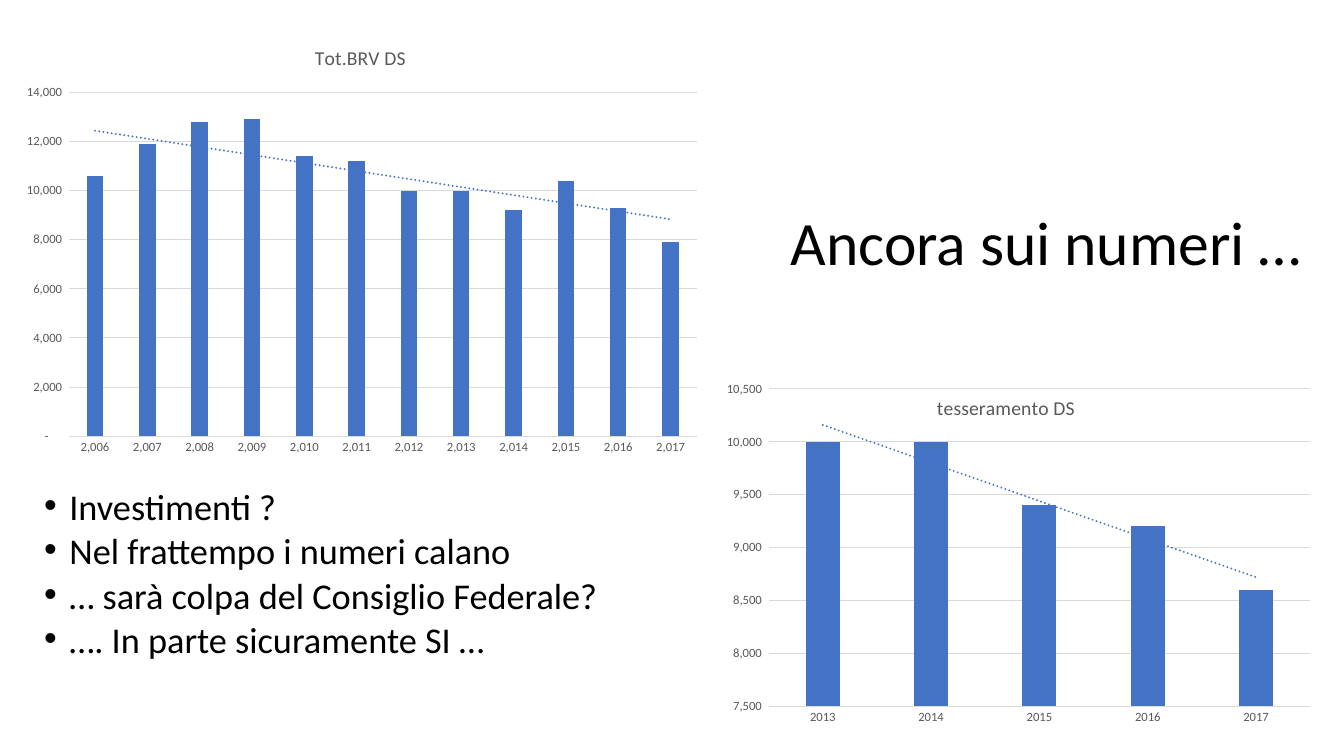
from lxml import etree
from pptx import Presentation, util as u
from pptx.chart import data as chart_data
from pptx.dml import color
from pptx.enum import chart as chart_enum, text
from pptx.oxml import parse_xml
from pptx.oxml.ns import nsdecls, qn

COLORS = {"text": "000000", "label": "595959", "grid": "D9D9D9", "bar": "4472C4"}
THOUSANDS = '_-* #,##0_-;\\-* #,##0_-;_-* "-"??_-;_-@_'


def set_all(target, **values):
    for name, value in values.items():
        setattr(target, name, value)


class SlideBuilder:
    """Holds the style and the current slide."""

    font_name = "Calibri"

    def __init__(self, deck):
        self.page = deck.slides.add_slide(deck.slide_layouts[5])

    def style_font(self, font, size, shade):
        set_all(font, name=self.font_name, size=u.Pt(size), bold=False)
        font.color.rgb = color.RGBColor.from_string(COLORS[shade])

    def style_line(self, line, shade):
        line.color.rgb = color.RGBColor.from_string(COLORS[shade])
        line.width = u.Pt(0.75)

    def title(self, words, bounds):
        box = self.page.shapes.title
        set_all(box, **dict(zip(("left", "top", "width", "height"), map(u.Inches, bounds))))
        set_all(box.text_frame, text=words, word_wrap=True,
                auto_size=text.MSO_AUTO_SIZE.NONE, vertical_anchor=text.MSO_ANCHOR.MIDDLE)
        para = box.text_frame.paragraphs[0]
        set_all(para, alignment=text.PP_ALIGN.LEFT, line_spacing=0.9)
        self.style_font(para.runs[0].font, 44, "text")

    def bullets(self, lines, bounds):
        frame = self.page.shapes.add_textbox(*map(u.Inches, bounds)).text_frame
        frame.word_wrap = True
        for number, words in enumerate(lines):
            para = frame.add_paragraph() if number else frame.paragraphs[0]
            set_all(para, line_spacing=0.7, space_before=u.Pt(10 if number else 0))
            props = para._p.get_or_add_pPr()
            props.set("marL", str(u.Inches(0.25)))
            props.set("indent", str(u.Inches(-0.25)))
            etree.SubElement(props, qn("a:buFont")).set("typeface", "Arial")
            etree.SubElement(props, qn("a:buChar")).set("char", "•")
            span = para.add_run()
            span.text = words
            self.style_font(span.font, 25.9, "text")

    def column_chart(self, name, years, values, scale, bounds, year_format="General"):
        data = chart_data.CategoryChartData(number_format=THOUSANDS)
        data.categories = years
        data.categories.number_format = year_format
        data.add_series(name, values)
        chart = self.page.shapes.add_chart(
            chart_enum.XL_CHART_TYPE.COLUMN_CLUSTERED, *map(u.Inches, bounds), data).chart
        self.style_font(chart.font, 10, "text")
        set_all(chart, has_legend=False, has_title=True)
        chart.chart_title.text_frame.text = name
        heading = chart.chart_title.text_frame.paragraphs[0].runs[0]
        self.style_font(heading.font, 14, "label")

        # Axes and gridlines
        for axis in (chart.category_axis, chart.value_axis):
            set_all(axis, major_tick_mark=chart_enum.XL_TICK_MARK.NONE,
                    minor_tick_mark=chart_enum.XL_TICK_MARK.NONE)
            self.style_font(axis.tick_labels.font, 9, "label")
        set_all(chart.category_axis.tick_labels, number_format=year_format,
                number_format_is_linked=False)
        self.style_line(chart.category_axis.format.line, "grid")
        low, high, step = scale
        set_all(chart.value_axis, minimum_scale=low, maximum_scale=high,
                major_unit=step, has_major_gridlines=True)
        set_all(chart.value_axis.tick_labels, number_format=THOUSANDS,
                number_format_is_linked=False)
        chart.value_axis.format.line.fill.background()
        self.style_line(chart.value_axis.major_gridlines.format.line, "grid")

        # Columns
        plot = chart.plots[0]
        set_all(plot, gap_width=219, overlap=-27, vary_by_categories=False)
        series = plot.series[0]
        series.format.fill.solid()
        series.format.fill.fore_color.rgb = color.RGBColor.from_string(COLORS["bar"])
        self.trend_line(series)
        return chart

    def trend_line(self, series):
        trend = parse_xml(
            f'<c:trendline {nsdecls("c", "a")}><c:spPr><a:ln w="{u.Pt(1.5)}" cap="rnd">'
            f'<a:solidFill><a:srgbClr val="{COLORS["bar"]}"/></a:solidFill>'
            '<a:prstDash val="sysDot"/></a:ln></c:spPr><c:trendlineType val="linear"/>'
            '<c:dispRSqr val="0"/><c:dispEq val="0"/></c:trendline>')
        series._element.find(qn("c:cat")).addprevious(trend)

    def fix_plot_area(self, chart, fractions):
        """Place the inner plot area and let the title overlap it."""
        area = chart._chartSpace.find(".//" + qn("c:plotArea"))
        for old in area.findall(qn("c:layout")):
            area.remove(old)
        sizes = "".join(f'<c:{key} val="{part}"/>' for key, part in zip("xywh", fractions))
        area.insert(0, parse_xml(
            f'<c:layout {nsdecls("c")}><c:manualLayout><c:layoutTarget val="inner"/>'
            f'<c:xMode val="edge"/><c:yMode val="edge"/>{sizes}</c:manualLayout></c:layout>'))
        heading = chart._chartSpace.find(".//" + qn("c:title"))
        overlay = heading.find(qn("c:overlay"))
        if overlay is None:
            overlay = parse_xml(f'<c:overlay {nsdecls("c")}/>')
            heading.find(qn("c:tx")).addnext(overlay)
        overlay.set("val", "1")


def main():
    deck = Presentation()
    set_all(deck, slide_width=u.Inches(13.33), slide_height=u.Inches(7.5))
    slide = SlideBuilder(deck)

    # Title and comments
    slide.title("Ancora sui numeri …", (7.74, 1.71, 5.49, 1.45))
    slide.bullets(["Investimenti ?", "Nel frattempo i numeri calano",
                   "… sarà colpa del Consiglio Federale?",
                   "…. In parte sicuramente SI …"], (0.34, 4.87, 6.33, 1.75))

    # Charts
    slide.column_chart(
        "Tot.BRV DS", range(2006, 2018),
        (10600, 11900, 12800, 12900, 11400, 11200, 10000, 10000, 9200, 10400, 9300, 7900),
        (0, 14000, 2000), (0.1, 0.26, 6.95, 4.34), year_format="#,##0")
    members = slide.column_chart(
        "tesseramento DS", range(2013, 2018), (10000, 10000, 9400, 9200, 8600),
        (7500, 10500, 500), (6.96, 3.75, 6.04, 3.62))
    slide.fix_plot_area(members, (0.11, 0.03, 0.89, 0.87))

    deck.save("out.pptx")


if __name__ == "__main__":
    main()
